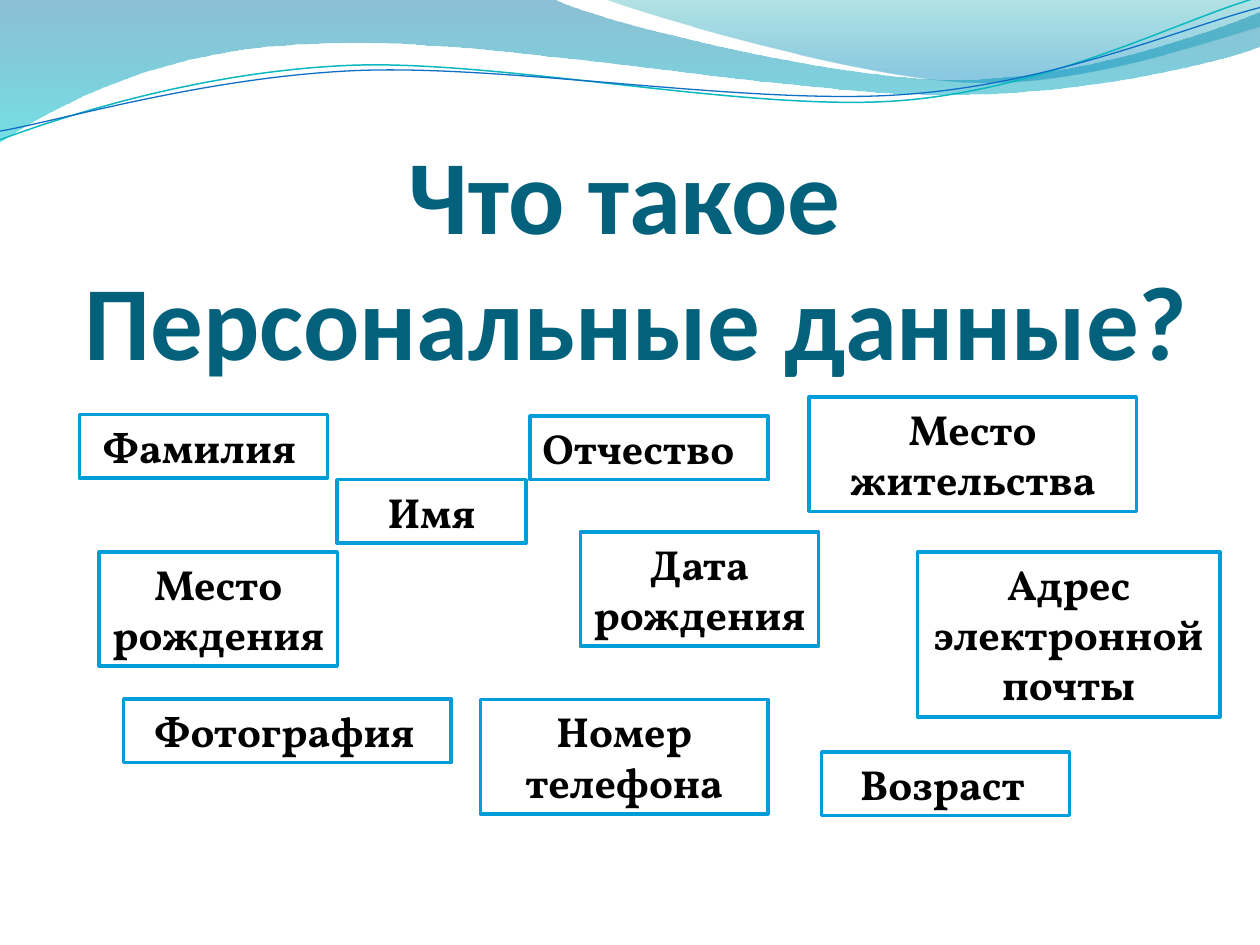
import pptx
import pptx.dml.color
import pptx.enum.shapes
import pptx.enum.text
import pptx.oxml.ns
import pptx.util
import lxml.etree

Pt = pptx.util.Pt
RGB = pptx.dml.color.RGBColor.from_string
ALIGN = pptx.enum.text.PP_ALIGN
ANCHOR = pptx.enum.text.MSO_ANCHOR
FIT = pptx.enum.text.MSO_AUTO_SIZE
qn = pptx.oxml.ns.qn

theme = {
    "title": ("Calibri", 60, "04617B"),
    "label": ("Vollkorn", 24, "000000"),
    "space": 18,
    "fill": "FFFFFF", "edge": "009DD9",
    # Gradient stops: position, colour, opacity in percent
    "band": [(0, "0074A1", 45), (1, "00C6CF", 55)],
    "fan": [(0, "00A1A9", 30), (0.8, "008BBF", 45)],
    "teal": "0AB8BF", "blue": "0F6FC6",
}


def style(par, name, align):
    font, size, color = theme[name]
    par.alignment = align
    for run in par.runs:
        gap = run.text == " "
        run.font.name, run.font.bold = font, not gap
        run.font.size = Pt(theme["space"] if gap else size)
        run.font.color.rgb = RGB(color)


def wave(start, steps, close):
    """Draw an outline from line steps (x, y) and Bezier steps (six numbers)."""
    pts = [(Pt(x), Pt(y)) for step in steps for x, y in zip(step[::2], step[1::2])]
    pen = slide.shapes.build_freeform(Pt(start[0]), Pt(start[1]))
    pen.add_line_segments(pts, close=close)
    shape = pen.convert_to_shape()
    shape.shadow.inherit = False
    # Join the three points of each Bezier step into one curve
    legs = iter(list(shape.element.iter(qn("a:lnTo"))))
    for step in steps:
        parts = [next(legs) for _ in range(len(step) // 2)]
        if len(parts) == 3:
            curve = lxml.etree.Element(qn("a:cubicBezTo"))
            parts[0].addprevious(curve)
            for leg in parts:
                curve.append(leg[0])
                leg.getparent().remove(leg)
    return shape


prs = pptx.Presentation()
prs.slide_width, prs.slide_height = Pt(720), Pt(540)
slide = prs.slides.add_slide(prs.slide_layouts[5])

# Filled waves
fills = [
    ("band", (0, 0), [
        (317, -0.5), (342.7, 12.2, 478, 45.4, 545.8, 45.4),
        (614.2, 45.4, 689.8, 18.7, 720, 6.5), (720.7, 25.9),
        (707.8, 31.7, 626.4, 54.7, 537.1, 54),
        (447.8, 54, 275, 20.2, 185, 24.5),
        (92.9, 25.9, 33.1, 59.8, -0.7, 81.4)]),
    ("fan", (344.9, -0.7), [
        (366.5, 7.9, 491, 44.6, 553.7, 46.8),
        (616.3, 49.7, 691.9, 23, 720, 15.1), (720, 0)]),
]
for name, start, steps in fills:
    shape = wave(start, steps, True)
    shape.line.fill.background()
    shape.fill.gradient()
    shape.fill.gradient_angle = 270
    for stop, (pos, color, _) in zip(shape.fill.gradient_stops, theme[name]):
        stop.position = pos
        stop.color.rgb = RGB(color)
    tints = shape.element.spPr.iter(qn("a:srgbClr"))
    for tint, (_, _, alpha) in zip(tints, theme[name]):
        lxml.etree.SubElement(tint, qn("a:alpha")).set("val", str(alpha * 1000))

# Thin wave lines
lines = [
    ("teal", 0.85, (0, 79.9), [
        (34.6, 67, 113.8, 41, 199.4, 37.4),
        (284.4, 33.8, 427, 64.1, 513.4, 57.6),
        (599.8, 51.1, 675.4, 10.8, 718.6, -1.4)]),
    ("blue", 0.75, (0, 74.9), [
        (33.8, 69.1, 118.1, 43.9, 203.8, 40.3),
        (290.2, 36.7, 429.8, 60.5, 516.2, 54),
        (601.9, 48.2, 677.5, 15.1, 720, 4.3)]),
]
for name, width, start, steps in lines:
    shape = wave(start, steps, False)
    shape.fill.background()
    shape.line.color.rgb = RGB(theme[name])
    shape.line.width = Pt(width)

# Title, in front of the waves
title = slide.shapes.title
slide.shapes.element.append(title.element)
title.left, title.top, title.width, title.height = Pt(36.7), Pt(128.2), Pt(653.8), Pt(90)
frame = title.text_frame
frame.text = "Что такое \vПерсональные данные?"
frame.word_wrap, frame.auto_size = True, FIT.NONE
frame.vertical_anchor = ANCHOR.BOTTOM
frame.margin_left = frame.margin_right = frame.margin_bottom = 0
frame.margin_top = Pt(3.6)
style(frame.paragraphs[0], "title", ALIGN.CENTER)

# Labelled boxes: text runs, left, top, width, number of lines
boxes = [
    (["Фамилия "], 45.4, 236.9, 141.8, 1),
    (["Имя"], 192.6, 274.1, 108, 1),
    (["Отчество", " "], 302.9, 237.8, 136.1, 1),
    (["Дата", " ", "рождения"], 331.6, 304, 136.1, 2),
    (["Место жительства"], 462.2, 226.9, 187.2, 2),
    (["Место", " ", "рождения"], 56.7, 315.4, 136.1, 2),
    (["Номер телефона"], 274.6, 399.8, 164.2, 2),
    (["Адрес", " ", "электронной", " ", "почты"], 524.3, 315.4, 172.8, 3),
    (["Фотография", " "], 70.7, 399.5, 187.2, 1),
    (["Возраст", " "], 469.6, 429.8, 141.5, 1),
]
for words, left, top, width, rows in boxes:
    box = slide.shapes.add_shape(pptx.enum.shapes.MSO_SHAPE.RECTANGLE, Pt(left),
                                 Pt(top), Pt(width), Pt(7.3 + 29 * rows))
    box.shadow.inherit = False
    box.fill.solid()
    box.fill.fore_color.rgb = RGB(theme["fill"])
    box.line.color.rgb = RGB(theme["edge"])
    box.line.width = Pt(2)
    frame = box.text_frame
    frame.word_wrap, frame.auto_size = True, FIT.SHAPE_TO_FIT_TEXT
    frame.vertical_anchor = ANCHOR.MIDDLE if len(words) == 1 and rows == 1 else ANCHOR.TOP
    par = frame.paragraphs[0]
    for word in words:
        par.add_run().text = word
    style(par, "label", ALIGN.LEFT if words[0] == "Отчество" else ALIGN.CENTER)

prs.save("out.pptx")
